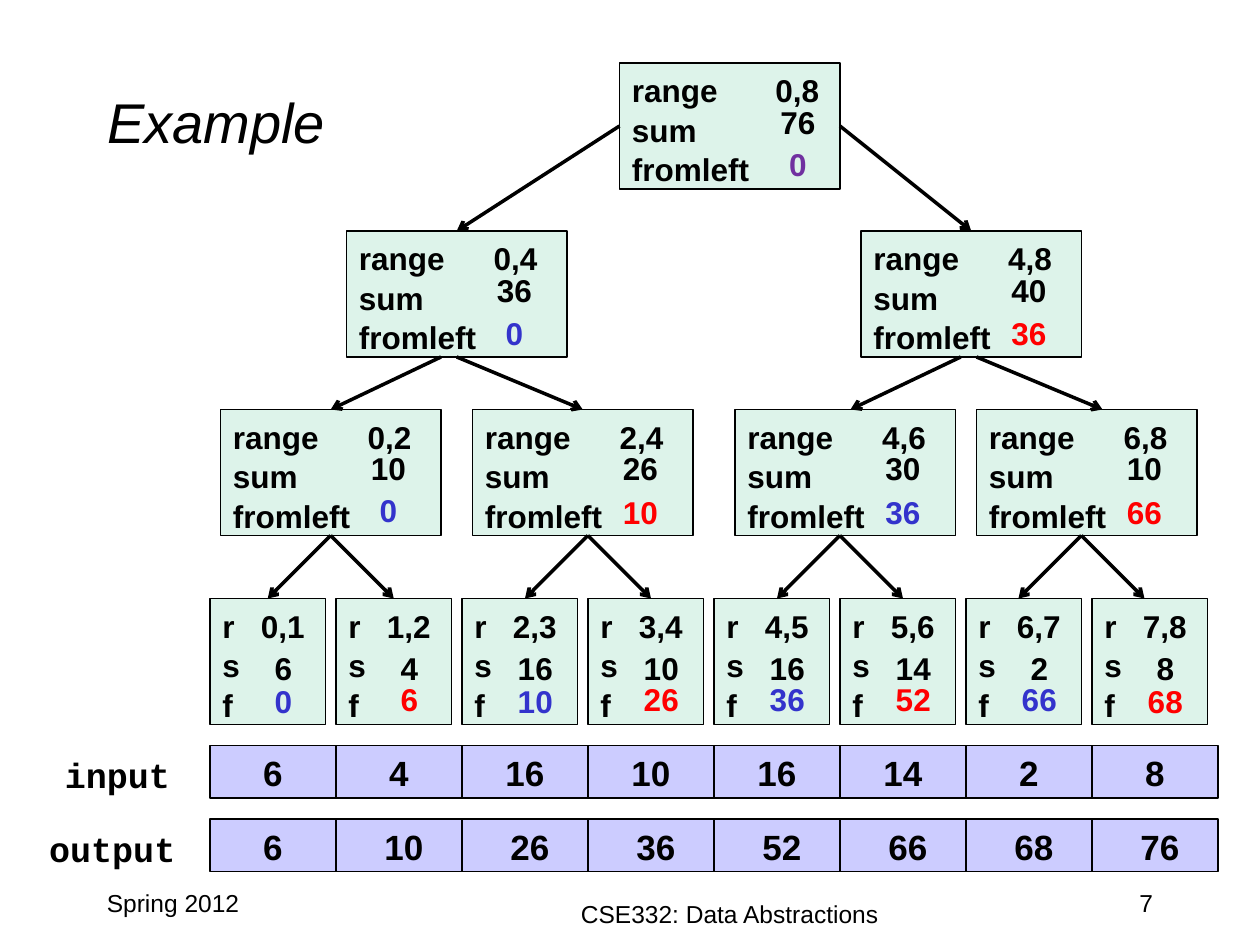
import pptx
import pptx.util
import pptx.dml.color
import pptx.enum.shapes
import pptx.enum.text
import pptx.oxml.ns
import lxml.etree

Pt = pptx.util.Pt
RGBColor = pptx.dml.color.RGBColor
ALIGN = pptx.enum.text.PP_ALIGN
ANCHOR = pptx.enum.text.MSO_ANCHOR
qn = pptx.oxml.ns.qn

BLACK = RGBColor(0x00, 0x00, 0x00)
MINT = RGBColor(0xDD, 0xF3, 0xEA)
LAVENDER = RGBColor(0xCC, 0xCC, 0xFF)
PURPLE = RGBColor(0x70, 0x30, 0xA0)
BLUE = RGBColor(0x33, 0x33, 0xCC)
RED = RGBColor(0xFF, 0x00, 0x00)

presentation = pptx.Presentation()
presentation.slide_width = Pt(720)
presentation.slide_height = Pt(540)
slide = presentation.slides.add_slide(presentation.slide_layouts[5])
shapes = slide.shapes


def write(frame, lines, size, color=BLACK, bold=True, font="Arial", align=ALIGN.LEFT, wrap=False):
    frame.word_wrap = wrap
    for number, line in enumerate(lines):
        paragraph = frame.add_paragraph() if number else frame.paragraphs[0]
        paragraph.alignment = align
        if bold:
            paragraph.line_spacing = 1.05
        run = paragraph.add_run()
        run.text = line
        run.font.name = font
        run.font.size = Pt(size)
        run.font.bold = bold
        run.font.color.rgb = color


def add_box(left, top, width, height, fill):
    box = shapes.add_shape(pptx.enum.shapes.MSO_SHAPE.RECTANGLE, Pt(left), Pt(top), Pt(width), Pt(height))
    box.shadow.inherit = False
    box.fill.solid()
    box.fill.fore_color.rgb = fill
    box.line.color.rgb = BLACK
    box.line.width = Pt(0.75)
    return box.text_frame


title = shapes.title
title.left, title.top, title.width, title.height = Pt(54), Pt(24), Pt(612), Pt(90)
title.text_frame.vertical_anchor = ANCHOR.MIDDLE
write(title.text_frame, ["Example"], 32, bold=False, wrap=True)
title.text_frame.paragraphs[0].runs[0].font.italic = True

for left, top, width, align, text in [
    (54, 504, 150, ALIGN.LEFT, "Spring 2012"),
    (258, 510, 318, ALIGN.CENTER, "CSE332: Data Abstractions"),
    (516, 504, 150, ALIGN.RIGHT, "7"),
]:
    footer = shapes.add_textbox(Pt(left), Pt(top), Pt(width), Pt(36))
    write(footer.text_frame, [text], 14, bold=False, align=align, wrap=True)

for label, left, width, top, numbers in [
    ("input", 30, 75, 426, ["6", "4", "16", "10", "16", "14", "2", "8"]),
    ("output", 21, 87, 468, ["6", " 10", " 26", " 36", " 52", " 66", " 68", " 76"]),
]:
    row_label = shapes.add_textbox(Pt(left), Pt(top), Pt(width), Pt(31.5))
    write(row_label.text_frame, [label], 20, font="Courier New")
    for column, number in enumerate(numbers):
        cell = add_box(120 + 72 * column, top, 72, 30, LAVENDER)
        cell.vertical_anchor = ANCHOR.MIDDLE
        write(cell, [number], 20, align=ALIGN.CENTER)

inner_nodes = [
    (354, 36, "0,8", "76", "0", PURPLE, 42),
    (198, 132, "0,4", "36", "0", BLUE, 43),
    (492, 132, "4,8", "40", "36", RED, 43),
    (126, 234, "0,2", "10", "0", BLUE, 42),
    (270, 234, "2,4", "26", "10", RED, 43),
    (420, 234, "4,6", "30", "36", BLUE, 43),
    (558, 234, "6,8", "10", "66", RED, 43),
]
leaf_values = [
    ("6", "0", BLUE, 43), ("4", "6", RED, 42), ("16", "10", BLUE, 43), ("10", "26", RED, 42),
    ("16", "36", BLUE, 42), ("14", "52", RED, 42), ("2", "66", BLUE, 42), ("8", "68", RED, 43),
]
INNER = (126, 77, 96, 18, ["range", "sum", "fromleft"])
ROOT = (126, 82, 102, 18, ["range", "sum", "fromleft"])
LEAF = (66, 22, 42, 24, ["r", "s", "f"])

nodes = [(ROOT if top == 36 else INNER, left, top, *values) for left, top, *values in inner_nodes]
nodes += [(LEAF, 120 + 72 * i, 342, f"{i},{i + 1}", *values) for i, values in enumerate(leaf_values)]

for style, left, top, bounds, total, fromleft, color, fromleft_drop in nodes:
    width, tab, value_center, total_drop, fields = style
    node = add_box(left, top, width, 72, MINT)
    node.vertical_anchor = ANCHOR.TOP
    write(node, [fields[0] + "\t" + bounds, *fields[1:]], 18, wrap=True)
    tab_list = lxml.etree.SubElement(node.paragraphs[0]._p.get_or_add_pPr(), qn("a:tabLst"))
    lxml.etree.SubElement(tab_list, qn("a:tab"), pos=str(Pt(tab)), algn="l")
    for value, value_color, drop in [(total, BLACK, total_drop), (fromleft, color, fromleft_drop)]:
        value_width = 14.4 + 10 * len(value)
        value_box = shapes.add_textbox(
            Pt(left + value_center - value_width / 2), Pt(top + drop), Pt(value_width), Pt(29))
        write(value_box.text_frame, [value], 18, value_color)

edges = [
    (354, 72, 261, 132), (480, 72, 555, 132),
    (252, 204, 189, 234), (261, 204, 333, 234),
    (549, 204, 486, 234), (558, 204, 630, 234),
]
for parent in [189, 336, 480, 618]:
    edges += [(parent, 306, parent + side, 342) for side in (-36, 36)]

for start_x, start_y, end_x, end_y in edges:
    edge = shapes.add_connector(
        pptx.enum.shapes.MSO_CONNECTOR.STRAIGHT, Pt(start_x), Pt(start_y), Pt(end_x), Pt(end_y))
    edge.line.color.rgb = BLACK
    edge.line.width = Pt(2)
    lxml.etree.SubElement(edge.line._get_or_add_ln(), qn("a:tailEnd"), type="arrow")
    lxml.etree.SubElement(edge._element.spPr, qn("a:effectLst"))

presentation.save("out.pptx")
